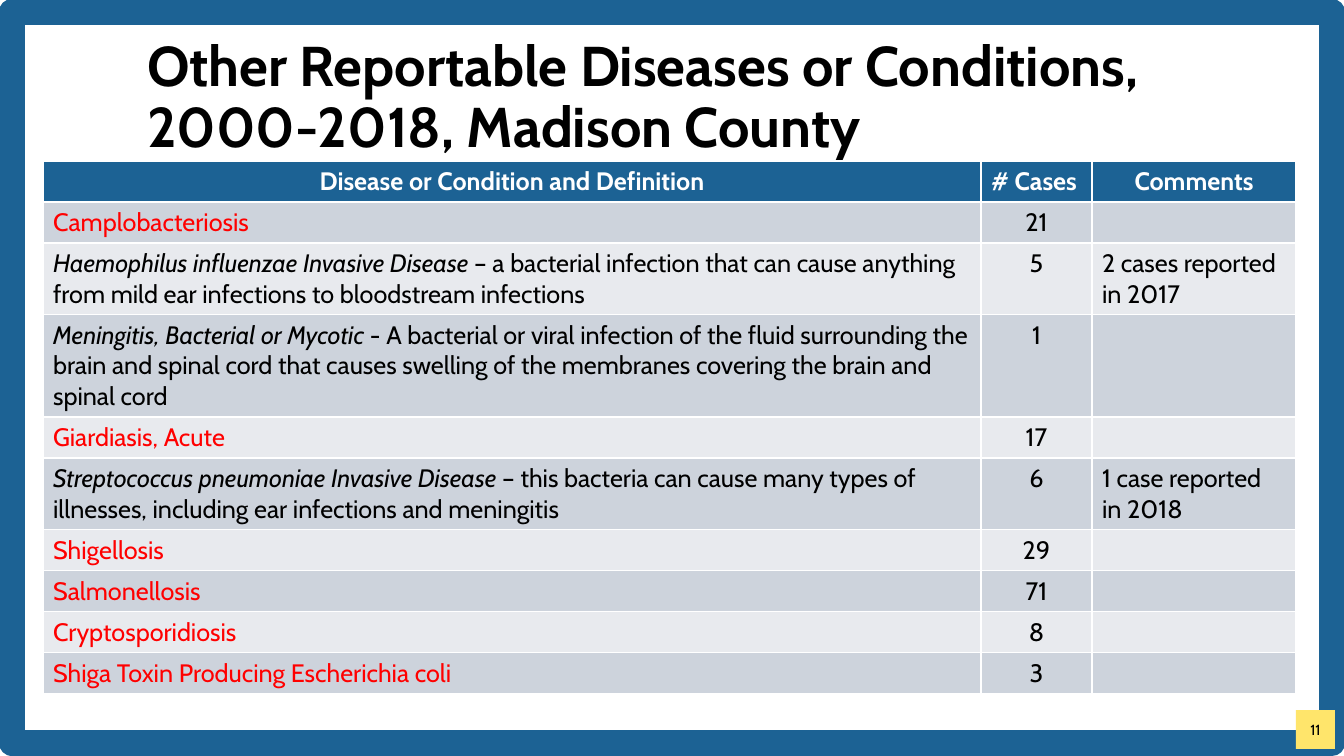
"""Build the slide of other reportable diseases in Madison County."""
import dataclasses

import pptx
import pptx.dml.color
import pptx.enum.shapes
import pptx.enum.text
import pptx.util

RGB = pptx.dml.color.RGBColor.from_string
ALIGN = pptx.enum.text.PP_ALIGN
MID = pptx.enum.text.MSO_ANCHOR.MIDDLE
RECT = pptx.enum.shapes.MSO_SHAPE.RECTANGLE


@dataclasses.dataclass(frozen=True)
class Theme:
    face: str = "Cabin"
    blue: str = "1C6294"
    gold: str = "FFE56B"
    ink: str = "000000"
    paper: str = "FFFFFF"
    alert: str = "FF0000"
    bands: tuple = ("CDD3DC", "E8EAEE")
    head: float = 40
    body: float = 18
    note: float = 10.5
    frame: float = 19


class Deck:
    def __init__(self, theme, wide, high):
        self.theme = theme
        self.show = pptx.Presentation()
        self.show.slide_width = self.px(wide)
        self.show.slide_height = self.px(high)
        self.slide = self.show.slides.add_slide(self.show.slide_layouts[5])

    def px(self, count):
        return pptx.util.Emu(round(count * 914400 / 100.8))

    def box(self, area):
        return [self.px(side) for side in area]

    def assign(self, target, values):
        for name, value in values.items():
            setattr(target, name, value)

    def text(self, frame, runs, size, color, align=ALIGN.LEFT, **form):
        para = frame.paragraphs[0]
        para.alignment = align
        for words, extra in runs:
            run = para.add_run()
            run.text = words
            base = {"name": self.theme.face, "size": pptx.util.Pt(size), "bold": False}
            self.assign(run.font, {**base, **form, **extra})
            run.font.color.rgb = RGB(color)
        return para

    def title(self, words, area):
        shape = self.slide.shapes.title
        self.assign(shape, dict(zip(("left", "top", "width", "height"), self.box(area))))
        none = pptx.enum.text.MSO_AUTO_SIZE.NONE
        self.assign(shape.text_frame, {"auto_size": none, "word_wrap": True, "vertical_anchor": MID})
        para = self.text(shape.text_frame, [(words, {})], self.theme.head, self.theme.ink, bold=True)
        para.line_spacing = 0.9

    def rect(self, area, fill=None, line=None):
        shape = self.slide.shapes.add_shape(RECT, *self.box(area))
        shape.shadow.inherit = False
        for part, color in ((shape.fill, fill), (shape.line.fill, line)):
            if color:
                part.solid()
                part.fore_color.rgb = RGB(color)
            else:
                part.background()
        return shape

    def border(self, area):
        shape = self.rect(area, line=self.theme.blue)
        shape.line.width = pptx.util.Pt(self.theme.frame)

    def badge(self, words, area):
        frame = self.rect(area, fill=self.theme.gold).text_frame
        margins = ("margin_left", "margin_right", "margin_top", "margin_bottom")
        self.assign(frame, {"vertical_anchor": MID, **dict.fromkeys(margins, 0)})
        self.text(frame, [(words, {})], self.theme.note, self.theme.ink, ALIGN.CENTER)

    def cell(self, cell, runs, fill, color, align, **form):
        cell.fill.solid()
        cell.fill.fore_color.rgb = RGB(fill)
        self.text(cell.text_frame, runs, self.theme.body, color, align, **form)

    def table(self, heads, rows, left, top, widths, step):
        theme = self.theme
        count = len(rows) + 1
        area = self.box((left, top, sum(widths), step * count))
        table = self.slide.shapes.add_table(count, len(widths), *area).table
        for col, width in zip(table.columns, widths):
            col.width = self.px(width)
        for row in table.rows:
            row.height = self.px(step)
        for col, (words, align) in enumerate(heads):
            self.cell(table.cell(0, col), [(words, {})], theme.blue, theme.paper, align, bold=True)
        for row, (name, detail, cases, remark) in enumerate(rows, 1):
            fill = theme.bands[(row - 1) % 2]
            if detail:
                runs, color = [(name + " ", {"italic": True}), (detail, {})], theme.ink
            else:
                runs, color = [(name, {})], theme.alert
            notes = [(remark, {})] if remark else []
            self.cell(table.cell(row, 0), runs, fill, color, ALIGN.LEFT)
            self.cell(table.cell(row, 1), [(str(cases), {})], fill, theme.ink, ALIGN.CENTER)
            self.cell(table.cell(row, 2), notes, fill, theme.ink, ALIGN.LEFT)


HEADS = [
    ("Disease or Condition and Definition", ALIGN.CENTER),
    ("# Cases", ALIGN.LEFT),
    ("Comments", ALIGN.CENTER),
]
ROWS = [
    ("Camplobacteriosis", "", 21, ""),
    ("Haemophilus influenzae Invasive Disease",
     "– a bacterial infection that can cause anything from mild ear infections "
     "to bloodstream infections", 5, "2 cases reported in 2017"),
    ("Meningitis, Bacterial or Mycotic",
     "- A bacterial or viral infection of the fluid surrounding the brain and spinal cord "
     "that causes swelling of the membranes covering the brain and spinal cord", 1, ""),
    ("Giardiasis, Acute", "", 17, ""),
    ("Streptococcus pneumoniae Invasive Disease",
     "– this bacteria can cause many types of illnesses, "
     "including ear infections and meningitis", 6, "1 case reported in 2018"),
    ("Shigellosis", "", 29, ""),
    ("Salmonellosis", "", 71, ""),
    ("Cryptosporidiosis", "", 8, ""),
    ("Shiga Toxin Producing Escherichia coli", "", 3, ""),
]


def main():
    deck = Deck(Theme(), 1344, 756)
    deck.border((12, 12, 1320, 731))
    deck.badge("11", (1296, 710, 39, 39))
    deck.title("Other Reportable Diseases or Conditions, 2000-2018, Madison County",
               (137, 46, 1159, 106))
    deck.table(HEADS, ROWS, 43, 161, (938, 111, 204), 41)
    deck.show.save("out.pptx")


if __name__ == "__main__":
    main()
